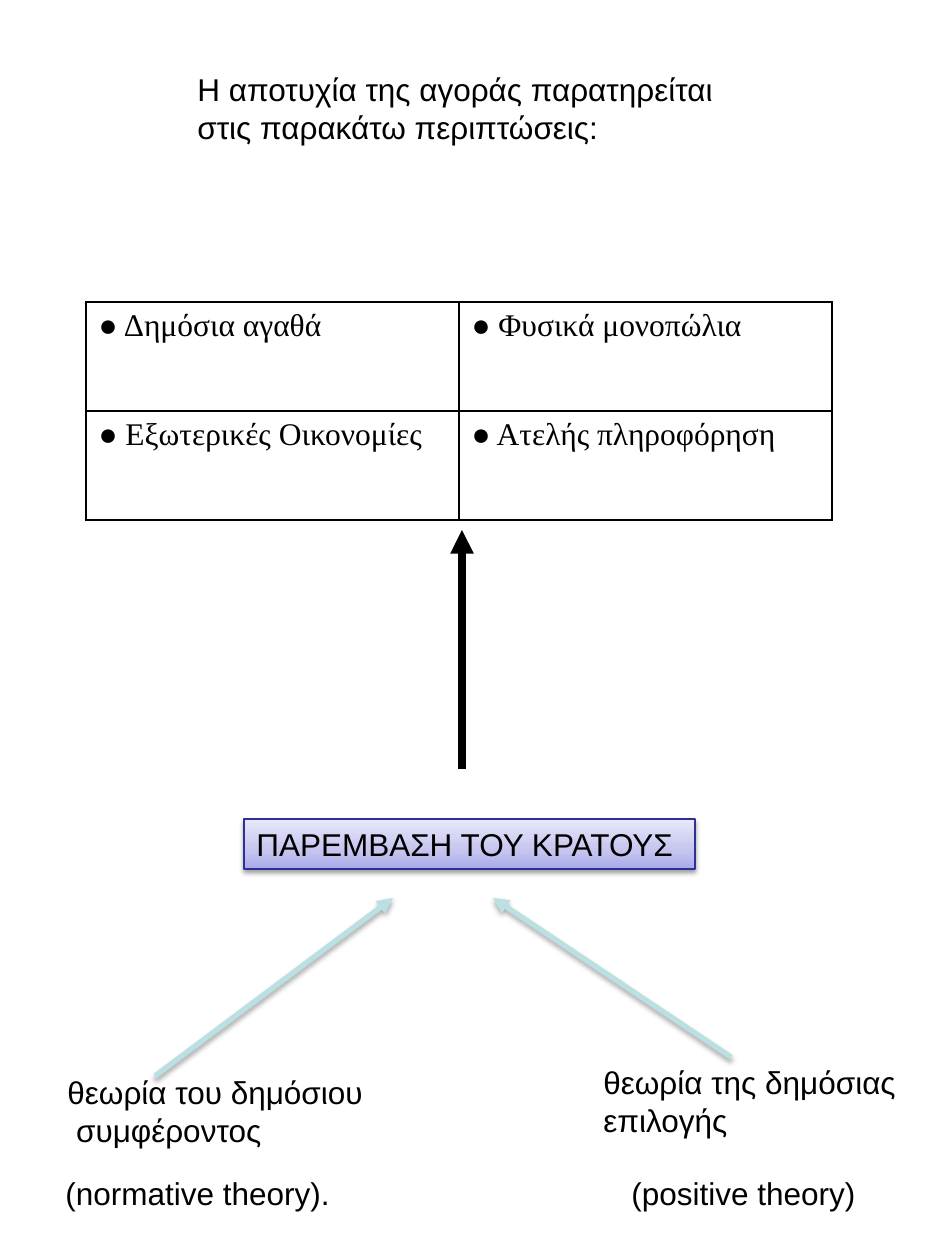
"""Build a slide on market failure and state intervention."""
from lxml.etree import SubElement
from pptx import Presentation
from pptx.dml.color import RGBColor
from pptx.enum.shapes import MSO_CONNECTOR, MSO_SHAPE
from pptx.enum.text import MSO_ANCHOR, MSO_AUTO_SIZE, PP_ALIGN
from pptx.oxml.ns import qn
from pptx.util import Emu, Pt

BLACK = RGBColor(0x00, 0x00, 0x00)
NAVY = RGBColor(0x2F, 0x2F, 0x98)
PALE_TEAL = RGBColor(0xBB, 0xE0, 0xE3)
LAVENDER_STOPS = [
    (0, RGBColor(0xA9, 0xA9, 0xE9)),
    (35, RGBColor(0xC4, 0xC4, 0xEF)),
    (100, RGBColor(0xE8, 0xE8, 0xFA)),
]
FAILURES = [
    ["● Δημόσια αγαθά", "● Φυσικά μονοπώλια"],
    ["● Εξωτερικές Οικονομίες", "● Ατελής πληροφόρηση"],
]
LABELS = [
    (185, 64, 551, 88, ["Η αποτυχία της αγοράς παρατηρείται", "στις παρακάτω περιπτώσεις:"]),
    (55, 1067, 321, 88, ["θεωρία του δημόσιου", " συμφέροντος"]),
    (591, 1057, 326, 88, ["θεωρία της δημόσιας", "επιλογής"]),
    (53, 1168, 299, 50, ["(normative theory)."]),
    (619, 1168, 258, 50, ["(positive theory)"]),
]


def px(count):
    """Turn whole pixels into EMU."""
    return Emu(round(count * 914400 / 126))


def add_color(parent, color):
    """Append a solid RGB colour element."""
    return SubElement(parent, qn("a:srgbClr"), val=str(color))


def style_paragraph(para, font_name, alignment):
    """Set the common text style of a paragraph."""
    para.alignment = alignment
    para.font.name = font_name
    para.font.size = Pt(18)
    para.font.color.rgb = BLACK


def write_lines(frame, lines):
    """Fill an unwrapped text frame with one paragraph per line."""
    frame.text = "\n".join(lines)
    frame.word_wrap = False
    frame.auto_size = MSO_AUTO_SIZE.SHAPE_TO_FIT_TEXT
    frame.vertical_anchor = MSO_ANCHOR.TOP
    for para in frame.paragraphs:
        style_paragraph(para, "Arial", PP_ALIGN.LEFT)


def add_label(slide, left, top, width, height, lines):
    """Add a plain text box."""
    box = slide.shapes.add_textbox(px(left), px(top), px(width), px(height))
    write_lines(box.text_frame, lines)


def add_shadow(effects, distance, opacity):
    """Add a soft shadow falling straight down."""
    shadow = SubElement(
        effects, qn("a:outerShdw"), blurRad=str(Pt(3.1)), dist=str(Pt(distance)),
        dir="5400000", rotWithShape="0")
    SubElement(add_color(shadow, BLACK), qn("a:alpha"), val=str(opacity * 1000))


def add_arrow(slide, start, end, color, weight, shadowed):
    """Add a straight arrow pointing at its end."""
    arrow = slide.shapes.add_connector(
        MSO_CONNECTOR.STRAIGHT, *map(px, start + end))
    arrow.line.color.rgb = color
    arrow.line.width = Pt(weight)
    SubElement(arrow.line._get_or_add_ln(), qn("a:tailEnd"), type="triangle")
    effects = SubElement(arrow._element.spPr, qn("a:effectLst"))
    if shadowed:
        add_shadow(effects, 1.8, 35)


def add_gradient_box(slide, left, top, width, height, lines):
    """Add a rectangle with a vertical gradient and a shadow."""
    box = slide.shapes.add_shape(
        MSO_SHAPE.RECTANGLE, px(left), px(top), px(width), px(height))
    box.fill.gradient()
    box.fill.gradient_angle = 90
    stops = box._element.spPr.find(".//" + qn("a:gsLst"))
    stops.clear()
    for position, color in LAVENDER_STOPS:
        add_color(SubElement(stops, qn("a:gs"), pos=str(position * 1000)), color)
    box.line.color.rgb = NAVY
    box.line.width = Pt(0.75)
    box.shadow.inherit = False
    add_shadow(box._element.spPr.find(qn("a:effectLst")), 1.6, 38)
    write_lines(box.text_frame, lines)


def set_borders(cell, weights):
    """Draw the left, right, top and bottom borders of a cell."""
    properties = cell._tc.get_or_add_tcPr()
    for side, weight in zip("LRTB", weights):
        border = SubElement(properties, qn(f"a:ln{side}"), w=str(Pt(weight)))
        add_color(SubElement(border, qn("a:solidFill")), BLACK)


def add_failure_table(slide, left, top, column_width, row_height):
    """Add the grid of market failures, with a heavier outer border."""
    last_row, last_column = len(FAILURES) - 1, len(FAILURES[0]) - 1
    table = slide.shapes.add_table(
        last_row + 1, last_column + 1, px(left), px(top),
        px(column_width * (last_column + 1)), px(row_height * (last_row + 1))).table
    table.first_row = table.horz_banding = False
    for row, texts in enumerate(FAILURES):
        for column, text in enumerate(texts):
            cell = table.cell(row, column)
            cell.text = text
            style_paragraph(cell.text_frame.paragraphs[0], "Times New Roman", PP_ALIGN.JUSTIFY)
            outer = (column == 0, column == last_column, row == 0, row == last_row)
            set_borders(cell, [1 if edge else 0.75 for edge in outer])
            cell.fill.background()


def main():
    """Build and save the deck."""
    deck = Presentation()
    deck.slide_width, deck.slide_height = px(945), px(1260)
    slide = deck.slides.add_slide(deck.slide_layouts[6])
    add_failure_table(slide, 86, 302, 373, 109)
    add_arrow(slide, (462, 769), (462, 530), BLACK, 4.5, False)
    add_gradient_box(slide, 244, 819, 451, 50, ["ΠΑΡΕΜΒΑΣΗ ΤΟΥ ΚΡΑΤΟΥΣ"])
    for label in LABELS:
        add_label(slide, *label)
    add_arrow(slide, (155, 1076), (393, 898), PALE_TEAL, 3, True)
    add_arrow(slide, (731, 1057), (493, 898), PALE_TEAL, 3, True)
    deck.save("out.pptx")


if __name__ == "__main__":
    main()
